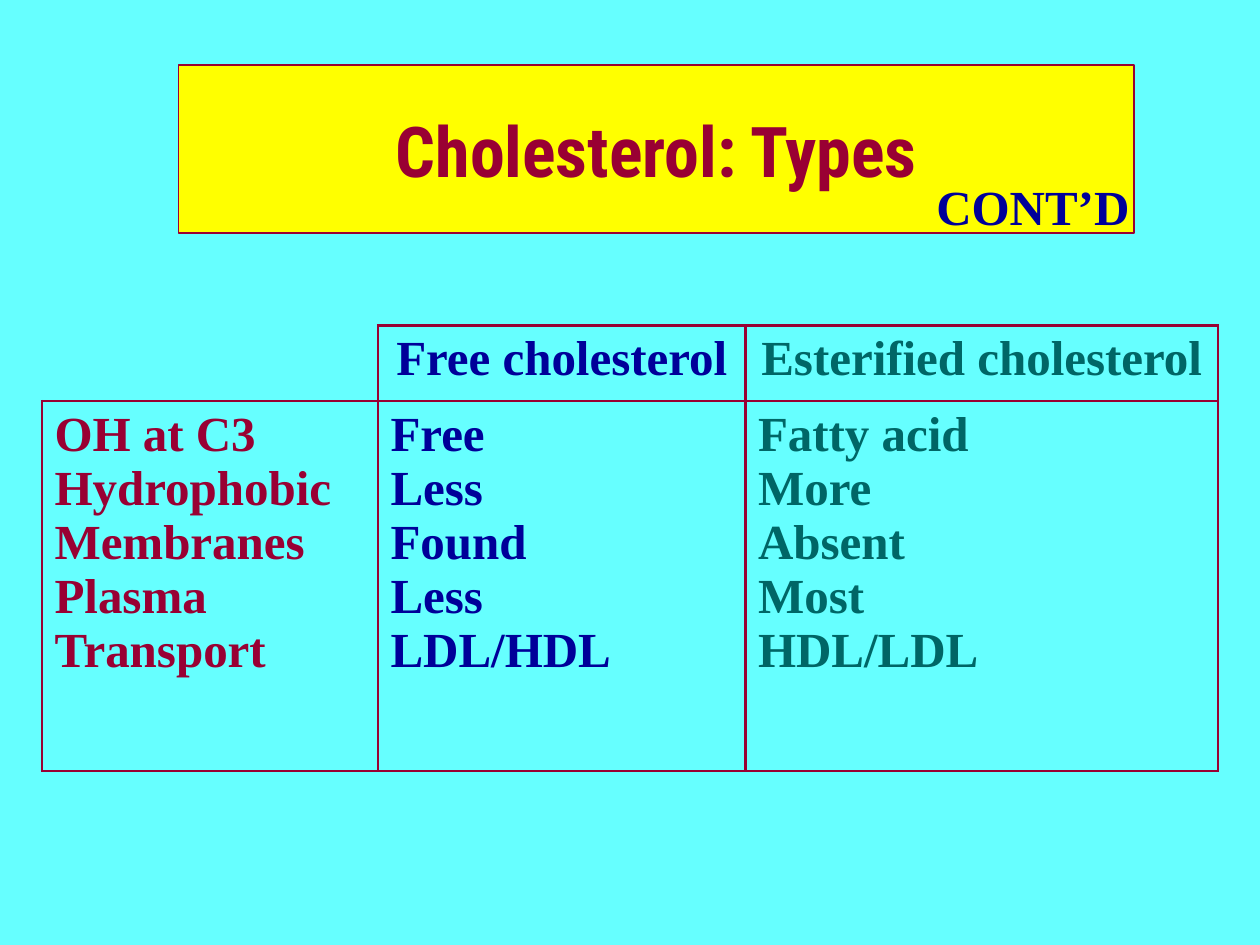
import pptx
import pptx.dml.color
import pptx.enum.shapes
import pptx.enum.text
import pptx.oxml
import pptx.oxml.ns
import pptx.util

ALIGN = pptx.enum.text.PP_ALIGN
COLORS = {"page": "66FFFF", "banner": "FFFF00", "wine": "990033",
          "navy": "000099", "teal": "006666"}
HEADS = ["", "Free cholesterol", "Esterified cholesterol"]
BODY = [
    ["OH at C3", "Hydrophobic", "Membranes", "Plasma", "Transport"],
    ["Free", "Less", "Found", "Less", "LDL/HDL"],
    ["Fatty acid", "More", "Absent", "Most", "HDL/LDL"],
]
TONES = ["wine", "navy", "teal"]


def rgb(name):
    return pptx.dml.color.RGBColor.from_string(COLORS[name])


def unit(n):
    """Length of n grid steps, twelve to the inch."""
    return pptx.util.Inches(n / 12)


class Deck:
    serif = "Times New Roman"
    sans = "Roboto Condensed"
    size = 28

    def __init__(self):
        self.prs = pptx.Presentation()
        self.prs.slide_width, self.prs.slide_height = unit(120), unit(90)
        self.slide = self.prs.slides.add_slide(self.prs.slide_layouts[6])
        fill = self.slide.background.fill
        fill.solid()
        fill.fore_color.rgb = rgb("page")

    def put(self, frame, lines, tone, align=ALIGN.LEFT, font=serif, size=size):
        for i, line in enumerate(lines):
            para = frame.add_paragraph() if i else frame.paragraphs[0]
            para.alignment = align
            run = para.add_run()
            run.text = line
            run.font.name = font
            run.font.size = pptx.util.Pt(size)
            run.font.bold = True
            run.font.color.rgb = rgb(tone)

    def banner(self, box, text):
        shape = self.slide.shapes.add_shape(
            pptx.enum.shapes.MSO_SHAPE.RECTANGLE, *map(unit, box))
        shape.shadow.inherit = False
        shape.fill.solid()
        shape.fill.fore_color.rgb = rgb("banner")
        shape.line.color.rgb = rgb("wine")
        shape.line.width = pptx.util.Pt(0.75)
        frame = shape.text_frame
        frame.vertical_anchor = pptx.enum.text.MSO_ANCHOR.MIDDLE
        self.put(frame, [text], "wine", ALIGN.CENTER, self.sans, 40)

    def label(self, box, text, tone):
        frame = self.slide.shapes.add_textbox(*map(unit, box)).text_frame
        frame.word_wrap = False
        frame.auto_size = pptx.enum.text.MSO_AUTO_SIZE.SHAPE_TO_FIT_TEXT
        self.put(frame, [text], tone)

    def edges(self, cell, shown):
        """Draw the cell sides named in shown and clear the others."""
        props = cell._tc.get_or_add_tcPr()
        for i, side in enumerate("LRTB"):
            ink = (f'<a:solidFill><a:srgbClr val="{COLORS["wine"]}"/></a:solidFill>'
                   if side in shown else "<a:noFill/>")
            props.insert(i, pptx.oxml.parse_xml(
                f'<a:ln{side} {pptx.oxml.ns.nsdecls("a")} '
                f'w="{pptx.util.Pt(1.5)}">{ink}</a:ln{side}>'))

    def table(self, left, top, cols, rows):
        grid = self.slide.shapes.add_table(
            len(rows), len(cols), unit(left), unit(top),
            unit(sum(cols)), unit(sum(rows))).table
        grid.first_row = grid.horz_banding = False
        for row, high in zip(grid.rows, rows):
            row.height = unit(high)
        for c, (wide, head, lines, tone) in enumerate(zip(cols, HEADS, BODY, TONES)):
            grid.columns[c].width = unit(wide)
            for r in range(len(rows)):
                cell = grid.cell(r, c)
                cell.fill.background()
                self.edges(cell, "LRTB" if r or head else "RB")
            if head:
                self.put(grid.cell(0, c).text_frame, [head], tone, ALIGN.CENTER)
            self.put(grid.cell(1, c).text_frame, lines, tone)


def main():
    deck = Deck()
    deck.banner((17, 6.2, 91, 16), "Cholesterol: Types")
    deck.table(4, 31, cols=(32, 35, 45), rows=(7.2, 35.2))
    deck.label((88, 16.2, 20.9, 6.8), "CONT’D", "navy")
    deck.prs.save("out.pptx")


if __name__ == "__main__":
    main()
